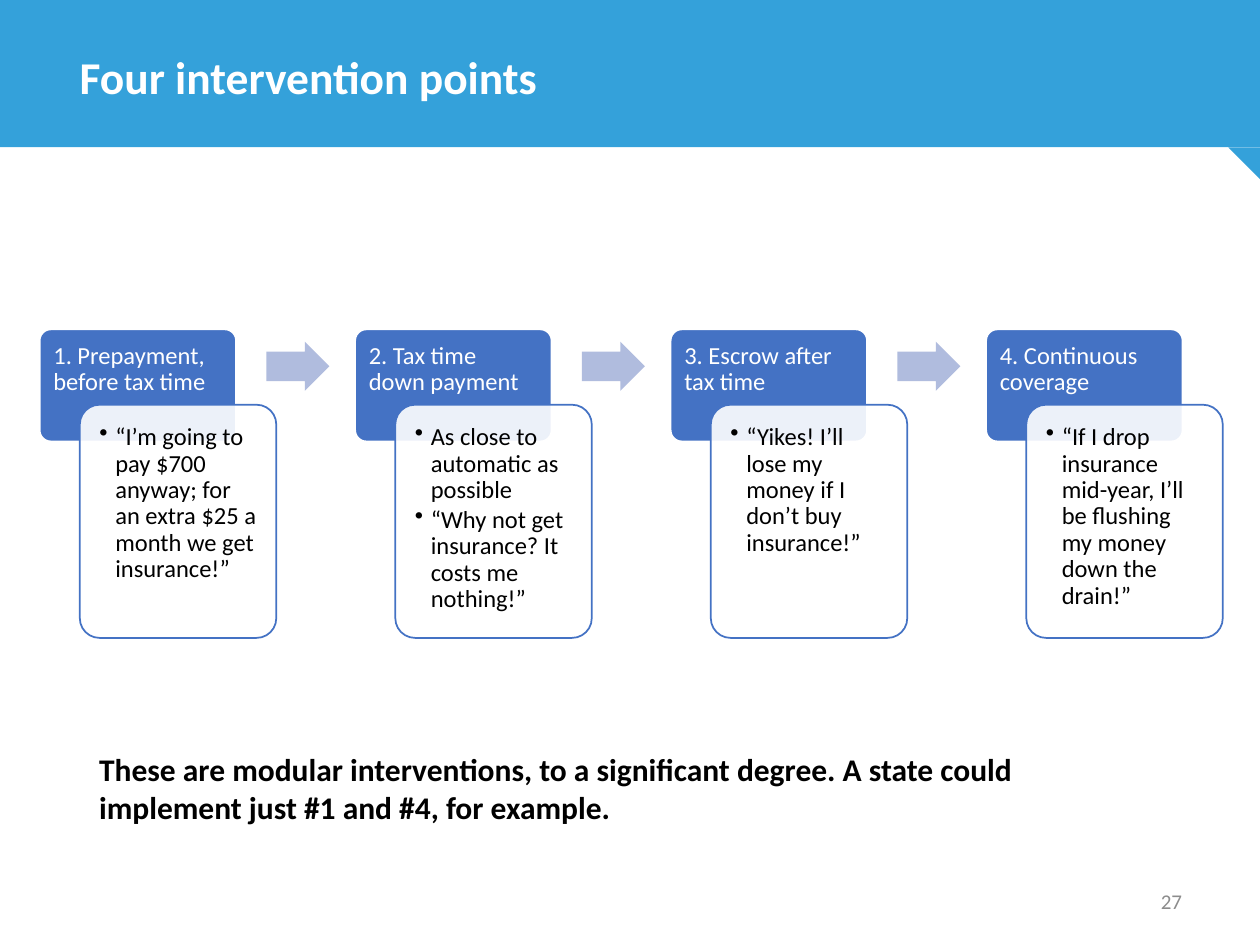
from lxml import etree
from pptx import Presentation
from pptx.dml.color import RGBColor
from pptx.enum.shapes import MSO_SHAPE
from pptx.enum.text import MSO_ANCHOR, MSO_AUTO_SIZE, PP_ALIGN
from pptx.oxml.ns import qn
from pptx.util import Cm, Pt

RECT = MSO_SHAPE.RECTANGLE
ROUND = MSO_SHAPE.ROUNDED_RECTANGLE
WEDGE = MSO_SHAPE.RIGHT_TRIANGLE
ARROW = MSO_SHAPE.RIGHT_ARROW
TOP, MIDDLE = MSO_ANCHOR.TOP, MSO_ANCHOR.MIDDLE
LEFT, RIGHT = PP_ALIGN.LEFT, PP_ALIGN.RIGHT
FIXED = MSO_AUTO_SIZE.NONE

SKY, BLUE, PALE = "34A1DA", "4472C4", "B0BCDE"
WHITE, BLACK, GREY = "FFFFFF", "000000", "8C8C8C"
FONT = "Calibri"
STEPS = [
    ("1. Prepayment, before tax time",
     ["“I’m going to pay $700 anyway; for an extra $25 a month we get insurance!”"]),
    ("2. Tax time down payment",
     ["As close to automatic as possible",
      "“Why not get insurance? It costs me nothing!”"]),
    ("3. Escrow after tax time",
     ["“Yikes! I’ll lose my money if I don’t buy insurance!”"]),
    ("4. Continuous coverage",
     ["“If I drop insurance mid-year, I’ll be flushing my money down the drain!”"]),
]


def color(code):
    """Return the colour for a hex string."""
    return RGBColor.from_string(code)


def shape(slide, kind, box, fill, line=None):
    """Add a flat preset shape; the box is in centimetres."""
    item = slide.shapes.add_shape(kind, *map(Cm, box))
    item.shadow.inherit = False
    item.fill.solid()
    item.fill.fore_color.rgb = color(fill)
    if line:
        item.line.color.rgb = color(line)
        item.line.width = Pt(1)
    else:
        item.line.fill.background()
    return item


def write(frame, lines, size, ink, bold=False, anchor=TOP, align=LEFT, pitch=1.0):
    """Fill a text frame with lines in one style."""
    frame.word_wrap = True
    frame.auto_size = FIXED
    frame.vertical_anchor = anchor
    frame.text = "\n".join(lines)
    for para in frame.paragraphs:
        para.alignment = align
        para.line_spacing = pitch
        for run in para.runs:
            font = run.font
            font.name, font.size, font.bold = FONT, Pt(size), bold
            font.color.rgb = color(ink)


def inset(frame, side, top):
    """Set the side and top margins in centimetres."""
    frame.margin_left = frame.margin_right = Cm(side)
    frame.margin_top = frame.margin_bottom = Cm(top)


def bullet(para):
    """Give a paragraph a hanging bullet."""
    para.space_after = Pt(2)
    props = para._p.get_or_add_pPr()
    props.set("marL", str(Cm(0.32)))
    props.set("indent", str(-Cm(0.32)))
    etree.SubElement(props, qn("a:buChar")).set("char", "•")


def header(slide, box, text):
    """Draw the band with its folded corner and place the title on it."""
    left, top, width, height = box
    fold = 0.64
    shape(slide, RECT, box, SKY)
    corner = (left + width - fold, top + height, fold, fold)
    shape(slide, WEDGE, corner, SKY).rotation = 180
    title = slide.shapes.title
    title.left, title.top = Cm(left + 1.35), Cm(top)
    title.width, title.height = Cm(22.3), Cm(3.2)
    write(title.text_frame, [text], 26, WHITE, True, MIDDLE, pitch=0.9)
    slide.shapes._spTree.append(title._element)


def step(slide, box, head, notes):
    """Draw one step: a blue head with a note card over its corner."""
    left, top, width, height = box
    tab = shape(slide, ROUND, (left, top, width, 2.26), BLUE, WHITE)
    tab.adjustments[0] = 0.1
    write(tab.text_frame, [head], 14, WHITE, pitch=0.9)
    inset(tab.text_frame, 0.21, 0.21)

    drop = 1.52
    card = shape(slide, ROUND, (left + 0.81, top + drop, width, height - drop), WHITE, BLUE)
    card.adjustments[0] = 0.1
    tint = card.fill._xPr.find(qn("a:solidFill"))[0]
    etree.SubElement(tint, qn("a:alpha")).set("val", "90000")
    write(card.text_frame, notes, 14, BLACK, pitch=0.9)
    inset(card.text_frame, 0.28, 0.28)
    for para in card.text_frame.paragraphs:
        bullet(para)


def flow(slide, box, steps):
    """Spread the steps evenly over the box with arrows between them."""
    left, top, width, height = box
    wide, shift = 3.96, 0.81
    pitch = (width - wide - shift) / (len(steps) - 1)
    for index, (head, notes) in enumerate(steps):
        spot = left + index * pitch
        if index:
            arrow = shape(slide, ARROW, (spot - 1.79, top + 0.25, 1.27, 0.99), PALE)
            arrow.adjustments[0] = 0.6
        step(slide, (spot, top, wide, height), head, notes)


def label(slide, box, text, size, ink, **style):
    """Add a text box."""
    item = slide.shapes.add_textbox(*map(Cm, box))
    write(item.text_frame, [text], size, ink, **style)


def main():
    """Build and save the slide."""
    deck = Presentation()
    deck.slide_width, deck.slide_height = Cm(25.4), Cm(19.05)
    slide = deck.slides.add_slide(deck.slide_layouts[5])
    header(slide, (0, 0, 25.4, 2.97), "Four intervention points")
    flow(slide, (0.8, 6.64, 23.85, 6.22), STEPS)
    label(slide, (1.75, 15, 20.88, 1.8),
          "These are modular interventions, to a significant degree. "
          "A state could implement just #1 and #4, for example.",
          18, BLACK, bold=True)
    label(slide, (17.93, 17.65, 6.15, 1.02), "27", 12, GREY, anchor=MIDDLE, align=RIGHT)
    deck.save("out.pptx")


if __name__ == "__main__":
    main()
